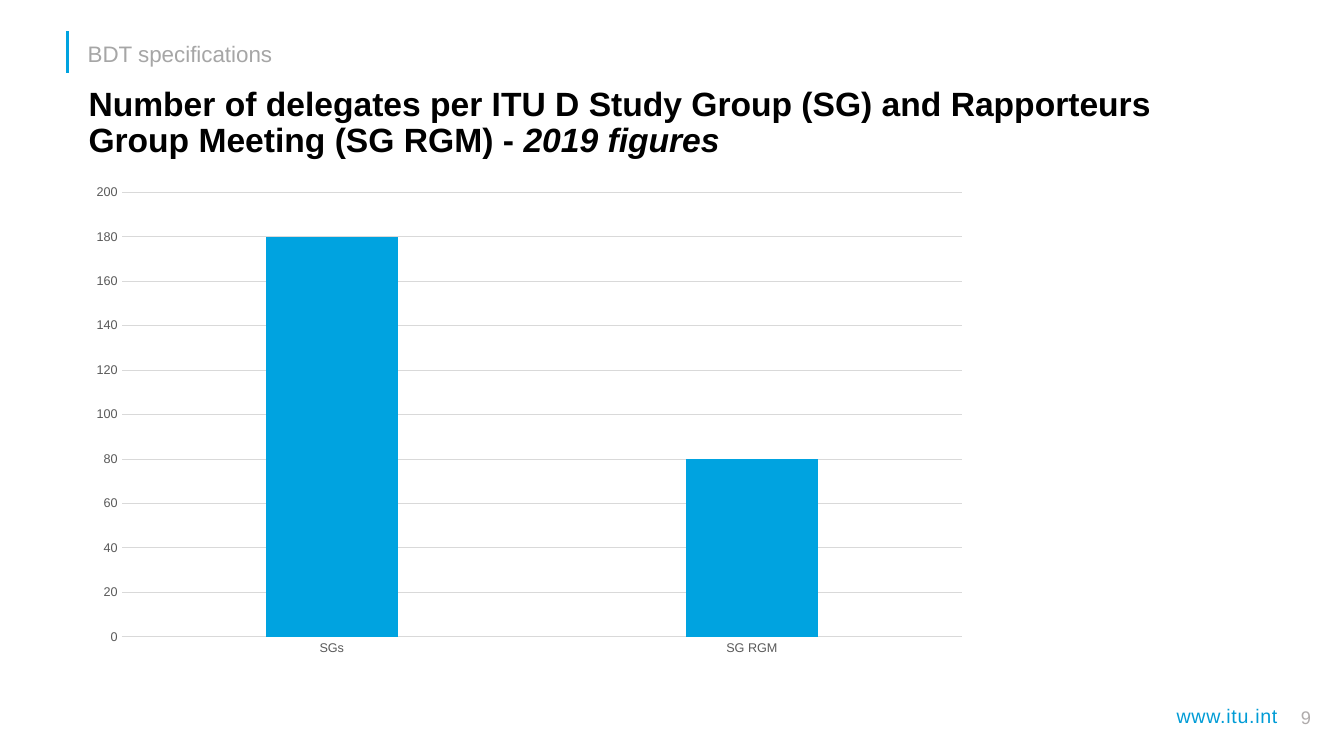
from pptx import Presentation
from pptx.chart.data import CategoryChartData
from pptx.dml.color import RGBColor
from pptx.enum.chart import XL_CHART_TYPE, XL_TICK_MARK
from pptx.enum.shapes import MSO_CONNECTOR
from pptx.enum.text import MSO_ANCHOR, PP_ALIGN
from pptx.oxml.ns import qn
from pptx.util import Inches, Pt
from lxml.etree import SubElement

THEME = {
    "font": "Arial",
    "accent": "00A3E0", "link": "009CD6", "title": "000000",
    "section": "A6A6A6", "number": "AFABAB", "axis": "595959", "grid": "D9D9D9",
    "title_size": 24, "section_size": 16, "link_size": 14,
    "number_size": 13, "chart_size": 10, "axis_size": 9,
}

TEXTS = [
    {"at": (10.04, 6.93, 2.73, 0.34), "style": "link", "spans": [("www.itu.int", {})],
     "para": {"alignment": PP_ALIGN.RIGHT}, "tracking": 50},
    {"at": (12.49, 6.96, 0.61, 0.32), "style": "number", "spans": [("9", {})],
     "para": {"alignment": PP_ALIGN.RIGHT}},
    {"at": (0.78, 0.82, 11.73, 0.7), "style": "title",
     "spans": [
         ("Number of delegates per ITU D Study Group (SG) and Rapporteurs "
          "Group Meeting (SG RGM) - ", {"bold": True}),
         ("2019 figures", {"bold": True, "italic": True}),
     ],
     "para": {"line_spacing": 0.9}},
    {"at": (0.67, 0.34, 4.98, 0.34), "style": "section",
     "spans": [("BDT specifications", {})],
     "para": {"line_spacing": Pt(22), "space_before": Pt(10)},
     "frame": {"vertical_anchor": MSO_ANCHOR.MIDDLE, "margin_left": Inches(0.2)}},
]

ACCENT_BAR = (0.67, 0.31, 0.67, 0.72)
CHART_AT = (0.78, 1.74, 8.94, 4.86)
DELEGATES = {"SGs": 180, "SG RGM": 80}


def color(name):
    return RGBColor.from_string(THEME[name])


def apply(target, values):
    for name, value in values.items():
        setattr(target, name, value)


def style_font(font, style, size):
    apply(font, {"name": THEME["font"], "size": Pt(THEME[size])})
    font.color.rgb = color(style)


def style_line(line, name, width):
    line.color.rgb = color(name)
    line.width = Pt(width)


def add_text(page, item):
    box = page.shapes.add_textbox(*map(Inches, item["at"]))
    frame = box.text_frame
    apply(frame, {"word_wrap": True, **item.get("frame", {})})
    para = frame.paragraphs[0]
    apply(para, item["para"])
    for text, extras in item["spans"]:
        span = para.add_run()
        span.text = text
        style_font(span.font, item["style"], item["style"] + "_size")
        apply(span.font, extras)
        if "tracking" in item:
            span.font._element.set("spc", str(item["tracking"]))


def add_accent_bar(page):
    bar = page.shapes.add_connector(MSO_CONNECTOR.STRAIGHT, *map(Inches, ACCENT_BAR))
    style_line(bar.line, "accent", 2)
    SubElement(bar._element.spPr, qn("a:effectLst"))


def add_delegate_chart(page):
    data = CategoryChartData()
    data.categories = list(DELEGATES)
    data.add_series("Series 1", list(DELEGATES.values()))
    chart = page.shapes.add_chart(
        XL_CHART_TYPE.COLUMN_CLUSTERED, *map(Inches, CHART_AT), data).chart
    apply(chart, {"has_legend": False, "has_title": False})
    style_font(chart.font, "title", "chart_size")

    plot = chart.plots[0]
    apply(plot, {"gap_width": 219, "overlap": -27, "vary_by_categories": False})
    fill = plot.series[0].format.fill
    fill.solid()
    fill.fore_color.rgb = color("accent")

    for axis in (chart.category_axis, chart.value_axis):
        apply(axis, {"major_tick_mark": XL_TICK_MARK.NONE,
                     "minor_tick_mark": XL_TICK_MARK.NONE})
        style_font(axis.tick_labels.font, "axis", "axis_size")
    style_line(chart.category_axis.format.line, "grid", 0.75)
    apply(chart.value_axis, {"minimum_scale": 0, "maximum_scale": 200,
                             "major_unit": 20, "has_major_gridlines": True})
    chart.value_axis.format.line.fill.background()
    style_line(chart.value_axis.major_gridlines.format.line, "grid", 0.75)


def main():
    deck = Presentation()
    apply(deck, {"slide_width": Inches(13.33), "slide_height": Inches(7.5)})
    page = deck.slides.add_slide(deck.slide_layouts[6])
    add_accent_bar(page)
    for item in TEXTS:
        add_text(page, item)
    add_delegate_chart(page)
    deck.save("out.pptx")


if __name__ == "__main__":
    main()
